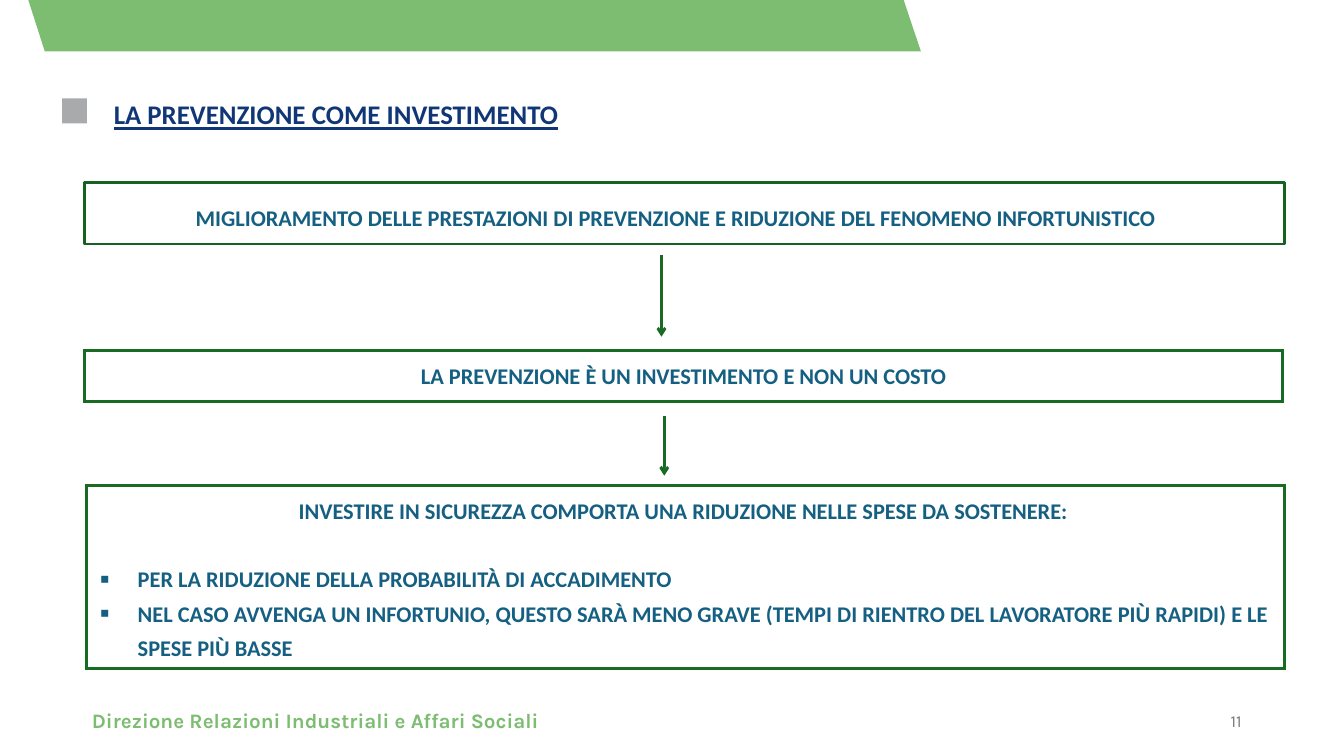
from lxml.etree import SubElement
from pptx import Presentation
from pptx.dml.color import RGBColor
from pptx.enum.shapes import MSO_CONNECTOR as CONN, MSO_SHAPE as SHAPE
from pptx.enum.text import MSO_ANCHOR as ANCHOR, PP_ALIGN as ALIGN
from pptx.oxml.ns import qn
from pptx.util import Pt

WHITE = RGBColor(0xFF, 0xFF, 0xFF)
GREEN = RGBColor(0x7D, 0xBD, 0x71)
BORDER = RGBColor(0x19, 0x6B, 0x24)
FRAME = RGBColor(0x17, 0x61, 0x21)
TEAL = RGBColor(0x15, 0x60, 0x82)
NAVY = RGBColor(0x10, 0x36, 0x76)
GREY = RGBColor(0x93, 0x95, 0x98)
PAGE_GREY = RGBColor(0x79, 0x79, 0x79)


class Deck:
    body, brand = "Calibri", "Karla"

    def __init__(self):
        self.prs = Presentation()
        self.prs.slide_width, self.prs.slide_height = Pt(960), Pt(540)
        self.s = self.prs.slides.add_slide(self.prs.slide_layouts[6])

    def run(self, p, text, size, color, font=None, bold=True, underline=None):
        r = p.add_run()
        r.text = text
        f = r.font
        f.name, f.size, f.bold, f.underline = font or self.body, Pt(size), bold, underline
        f.color.rgb = color
        if f.name == self.body:
            r._r.get_or_add_rPr().set("cap", "small")

    def insets(self, tf, left, top, right, bottom):
        tf.margin_left, tf.margin_top = Pt(left), Pt(top)
        tf.margin_right, tf.margin_bottom = Pt(right), Pt(bottom)

    def text(self, box, text, size, color, insets=(7.2, 3.6, 7.2, 3.6), align=ALIGN.LEFT,
             anchor=ANCHOR.MIDDLE, before=0, **style):
        tf = self.s.shapes.add_textbox(*map(Pt, box)).text_frame
        tf.word_wrap, tf.vertical_anchor = True, anchor
        self.insets(tf, *insets)
        p = tf.paragraphs[0]
        p.alignment, p.space_before = align, Pt(before)
        self.run(p, text, size, color, **style)

    def paint(self, sp, fill, line=None, width=2):
        sp.shadow.inherit = False
        sp.fill.solid()
        sp.fill.fore_color.rgb = fill
        if line is None:
            sp.line.fill.background()
        else:
            sp.line.color.rgb, sp.line.width = line, Pt(width)

    def rect(self, box, fill, line=None, opacity=None):
        sp = self.s.shapes.add_shape(SHAPE.RECTANGLE, *map(Pt, box))
        self.paint(sp, fill, line)
        if opacity:
            clr = sp._element.spPr.find(qn("a:solidFill"))[0]
            SubElement(clr, qn("a:alpha"), val=str(opacity * 1000))

    def polygon(self, points, fill):
        start, *rest = [(Pt(x), Pt(y)) for x, y in points]
        fb = self.s.shapes.build_freeform(*start)
        fb.add_line_segments(rest, close=True)
        self.paint(fb.convert_to_shape(), fill)

    def arrow(self, x, top, bottom):
        c = self.s.shapes.add_connector(CONN.STRAIGHT, Pt(x), Pt(top), Pt(x), Pt(bottom))
        c.line.color.rgb, c.line.width = BORDER, Pt(2)
        SubElement(c.line._get_or_add_ln(), qn("a:tailEnd"), type="arrow")
        SubElement(c._element.spPr, qn("a:effectLst"))

    def borders(self, cell, color, width):
        tcPr = cell._tc.get_or_add_tcPr()
        for side in "LRTB":
            ln = SubElement(tcPr, qn(f"a:ln{side}"), w=str(Pt(width)))
            SubElement(SubElement(ln, qn("a:solidFill")), qn("a:srgbClr"), val=str(color))

    def bullet(self, p):
        pPr = p._p.get_or_add_pPr()
        pPr.set("marL", str(Pt(27)))
        pPr.set("indent", str(-Pt(27)))
        SubElement(pPr, qn("a:buFont"), typeface="Arial")
        SubElement(pPr, qn("a:buChar"), char="▪")

    def table(self, box, heading, bullets=()):
        t = self.s.shapes.add_table(1, 1, *map(Pt, box)).table
        t.first_row = t.horz_banding = False
        cell = t.cell(0, 0)
        self.insets(cell, 9.4, 5, 9.4, 5)
        self.borders(cell, BORDER, 2.25)
        cell.fill.solid()
        cell.fill.fore_color.rgb = WHITE
        tf = cell.text_frame
        p = tf.paragraphs[0]
        p.alignment = ALIGN.CENTER
        self.run(p, heading, 20, TEAL)
        if bullets:
            p.space_after = Pt(24.4)
        for item in bullets:
            p = tf.add_paragraph()
            self.bullet(p)
            self.run(p, item, 20, TEAL)


def main():
    d = Deck()
    d.polygon([(20.2, 0), (32, 36.8), (657.8, 36.8), (645.5, 0)], GREEN)
    d.rect((44.4, 70.3, 17.8, 17.8), GREY, opacity=80)
    d.text((74.2, 62, 812, 34), "la prevenzione come investimento", 24, NAVY, underline=True)

    d.rect((60.5, 130.3, 856.8, 44), WHITE, FRAME)
    d.text((60.5, 131.5, 844, 44), "miglioramento delle prestazioni di prevenzione e riduzione "
           "del fenomeno infortunistico", 20, TEAL, (3.6,) * 4, ALIGN.CENTER)
    d.arrow(472.5, 182.2, 240.5)
    d.table((60.5, 250.6, 855.4, 36), "la prevenzione è un investimento e non un costo")
    d.arrow(474.5, 297.4, 339.8)
    d.table((62, 347, 855.4, 129.6),
            "investire in sicurezza comporta una riduzione nelle spese da sostenere: ",
            ["per la riduzione della probabilità di accadimento",
             "nel caso avvenga un infortunio, questo sarà meno grave (tempi di rientro del "
             "lavoratore più rapidi) e le spese più basse"])

    d.text((65.6, 504, 423.4, 19.4), "Direzione Relazioni Industriali e Affari Sociali", 14.7,
           GREEN, (0, 1.4, 0, 0), anchor=ANCHOR.TOP, before=1.3, font=d.brand)
    d.text((678, 500.5, 216, 28.8), "11", 12, PAGE_GREY, align=ALIGN.RIGHT,
           font=d.brand, bold=False)
    d.prs.save("out.pptx")


if __name__ == "__main__":
    main()
